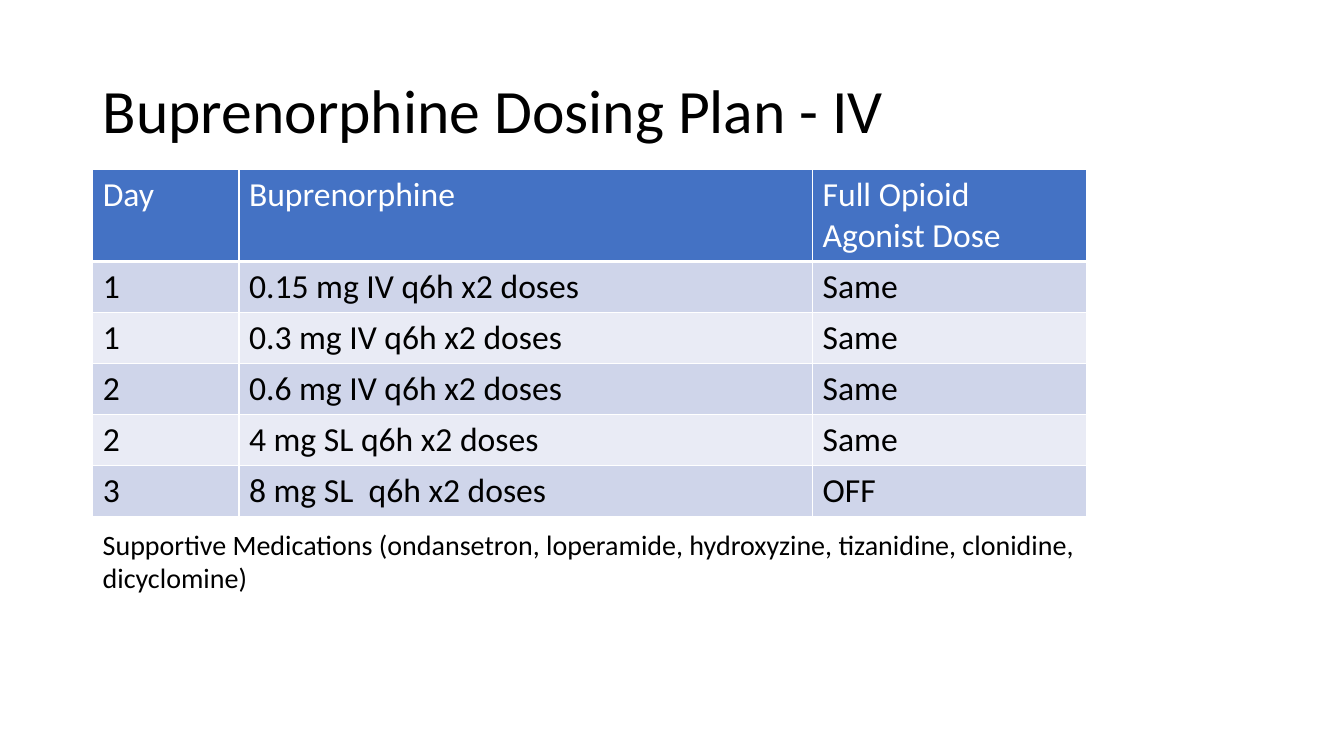
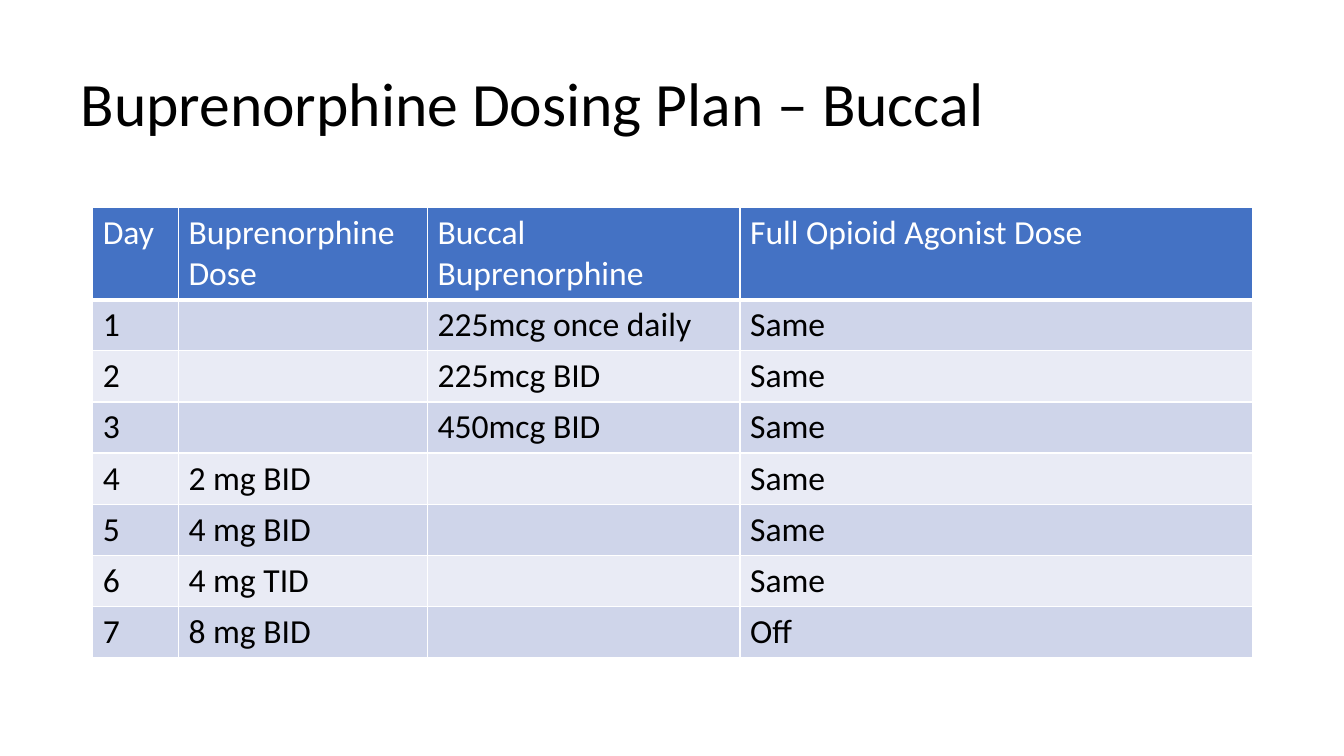
from dataclasses import dataclass

from lxml.etree import SubElement as Sub
from pptx import Presentation
from pptx.dml.color import RGBColor as Rgb
from pptx.enum.text import MSO_ANCHOR as Anchor, MSO_AUTO_SIZE as Fit, PP_ALIGN as Align
from pptx.oxml.ns import qn
from pptx.util import Inches, Pt

COLOR = {
    "ink": "000000",
    "white": "FFFFFF",
    "head": "4472C4",
    "dark": "CFD5EA",
    "light": "E9EBF5",
}
FONT = "Calibri"
LEFT = 0.92
HEAD, ROW = 0.91, 0.5


@dataclass(frozen=True)
class Box:
    left: float
    top: float
    width: float
    height: float

    def place(self) -> tuple:
        return tuple(map(Inches, (self.left, self.top, self.width, self.height)))


@dataclass(frozen=True)
class Plan:
    title: str
    frame: Box
    top: float
    widths: tuple
    rows: tuple
    note: str = ""


PLANS = (
    Plan(
        "Buprenorphine Dosing Plan - IV",
        Box(LEFT, 0.4, 11.5, 1.45),
        1.68,
        (1.45, 5.69, 2.72),
        (
            ("Day", "Buprenorphine", "Full Opioid Agonist Dose"),
            ("1", "0.15 mg IV q6h x2 doses", "Same"),
            ("1", "0.3 mg IV q6h x2 doses", "Same"),
            ("2", "0.6 mg IV q6h x2 doses", "Same"),
            ("2", "4 mg SL q6h x2 doses", "Same"),
            ("3", "8 mg SL  q6h x2 doses", "OFF"),
        ),
        "Supportive Medications (ondansetron, loperamide, hydroxyzine, "
        "tizanidine, clonidine, dicyclomine)",
    ),
    Plan(
        "Buprenorphine Dosing Plan – Buccal",
        Box(0.7, 0.55, 11.5, 1.01),
        2.06,
        (0.85, 2.47, 3.1, 5.08),
        (
            ("Day", "Buprenorphine Dose", "Buccal Buprenorphine", "Full Opioid Agonist Dose"),
            ("1", "", "225mcg once daily", "Same"),
            ("2", "", "225mcg BID", "Same"),
            ("3", "", "450mcg BID", "Same"),
            ("4", "2 mg BID", "", "Same"),
            ("5", "4 mg BID", "", "Same"),
            ("6", "4 mg TID", "", "Same"),
            ("7", "8 mg BID", "", "Off"),
        ),
    ),
)


def write(frame, text: str, size: int, color: str = "ink") -> None:
    frame.text = text
    for run in frame.paragraphs[0].runs:
        font = run.font
        font.name, font.size, font.bold = FONT, Pt(size), False
        font.color.rgb = Rgb.from_string(COLOR[color])


def edge(cell, side: str, width: int) -> None:
    line = Sub(cell._tc.get_or_add_tcPr(), qn(f"a:{side}"), w=str(Pt(width)))
    fill = Sub(line, qn("a:solidFill"))
    Sub(fill, qn("a:srgbClr"), val=COLOR["white"])


def add_title(slide, plan: Plan) -> None:
    title = slide.shapes.title
    title.left, title.top, title.width, title.height = plan.frame.place()
    frame = title.text_frame
    write(frame, plan.title, 44)
    frame.word_wrap = True
    frame.auto_size = Fit.NONE
    frame.vertical_anchor = Anchor.MIDDLE
    frame.paragraphs[0].alignment = Align.LEFT
    frame.paragraphs[0].line_spacing = 0.9


def add_grid(slide, plan: Plan) -> None:
    count = len(plan.rows)
    box = Box(LEFT, plan.top, sum(plan.widths), HEAD + ROW * (count - 1))
    grid = slide.shapes.add_table(count, len(plan.widths), *box.place()).table
    for column, width in zip(grid.columns, plan.widths):
        column.width = Inches(width)
    for i, texts in enumerate(plan.rows):
        grid.rows[i].height = Inches(ROW if i else HEAD)
        shade = ("dark" if i % 2 else "light") if i else "head"
        for j, text in enumerate(texts):
            cell = grid.cell(i, j)
            write(cell.text_frame, text, 24, "ink" if i else "white")
            edge(cell, "lnL", 1)
            edge(cell, "lnR", 1)
            edge(cell, "lnT", 3 if i == 1 else 1)
            edge(cell, "lnB", 1 if i else 3)
            cell.fill.solid()
            cell.fill.fore_color.rgb = Rgb.from_string(COLOR[shade])


def add_note(slide, plan: Plan) -> None:
    box = Box(LEFT, 5.18, sum(plan.widths), 0.77)
    frame = slide.shapes.add_textbox(*box.place()).text_frame
    frame.word_wrap = True
    frame.auto_size = Fit.SHAPE_TO_FIT_TEXT
    write(frame, plan.note, 20)


def main() -> None:
    deck = Presentation()
    deck.slide_width, deck.slide_height = Inches(13.33), Inches(7.5)
    layout = deck.slide_layouts.get_by_name("Title Only")
    for plan in PLANS:
        slide = deck.slides.add_slide(layout)
        add_title(slide, plan)
        add_grid(slide, plan)
        if plan.note:
            add_note(slide, plan)
    deck.save("out.pptx")


if __name__ == "__main__":
    main()
